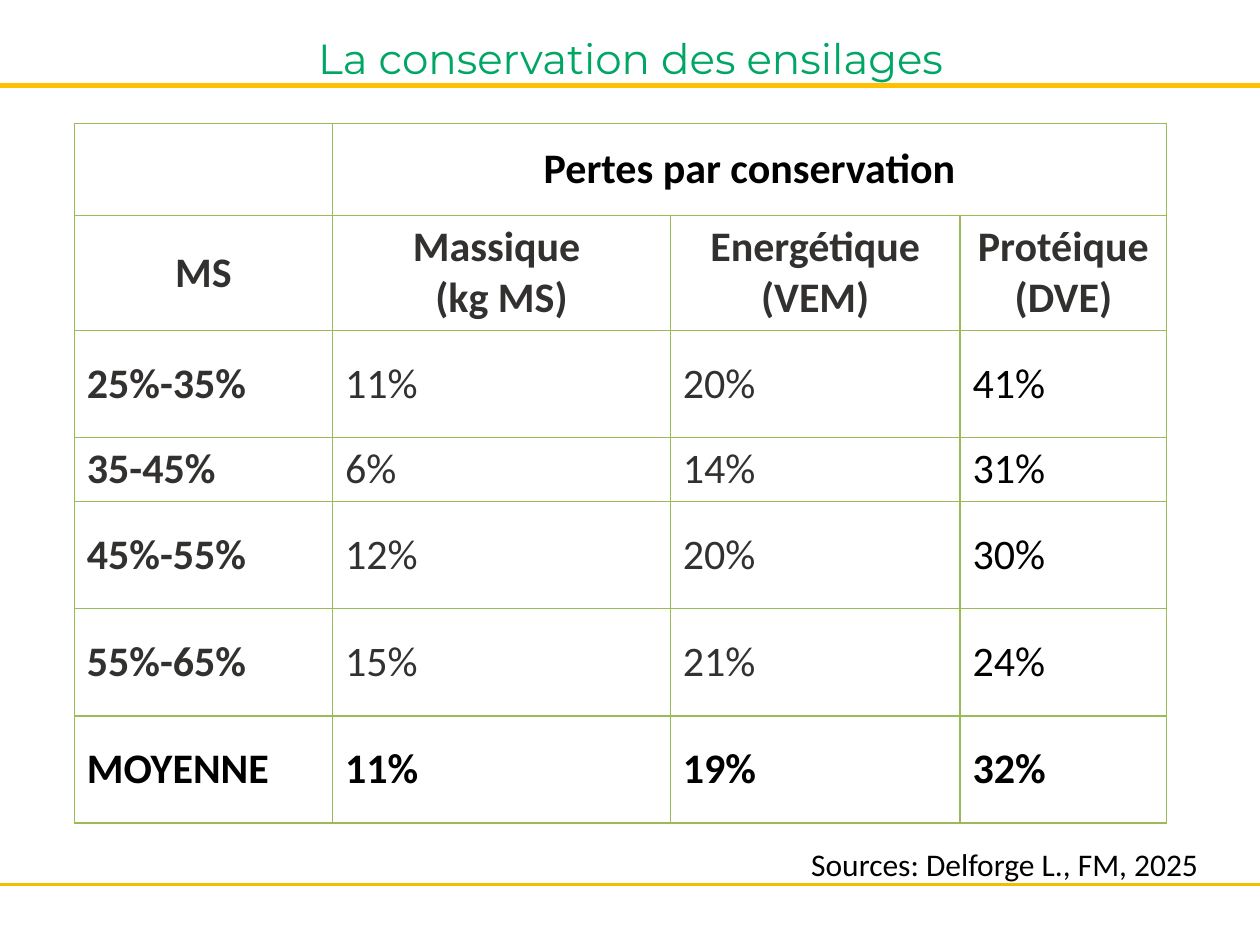
from lxml import etree
from pptx import Presentation
from pptx import util as u
from pptx.dml.color import RGBColor
from pptx.enum import shapes, text
from pptx.oxml.ns import qn

GREEN = RGBColor(0x00, 0xA6, 0x64)
GOLD = RGBColor(0xFF, 0xC0, 0x00)
DARK_GOLD = RGBColor(0xF2, 0xBE, 0x00)
BORDER = RGBColor(0x9B, 0xBB, 0x59)
CHARCOAL = RGBColor(0x32, 0x31, 0x30)
BLACK = RGBColor(0x00, 0x00, 0x00)

COLUMN_WIDTHS = [2.05, 2.68, 2.3, 1.64]
ROW_HEIGHTS = [0.73, 0.89, 0.85, 0.49, 0.85, 0.85, 0.85]
ROWS = [
    ["", "Pertes par conservation", "", ""],
    ["MS", "Massique \n(kg MS)", "Energétique (VEM)", "Protéique (DVE)"],
    ["25%-35%", "11%", "20%", "41%"],
    ["35-45%", "6%", "14%", "31%"],
    ["45%-55%", "12%", "20%", "30%"],
    ["55%-65%", "15%", "21%", "24%"],
    ["MOYENNE", "11%", "19%", "32%"],
]


def format_text(frame, color, alignment=text.PP_ALIGN.LEFT, **font_format):
    for paragraph in frame.paragraphs:
        paragraph.alignment = alignment
        paragraph.font.color.rgb = color
        for name, value in font_format.items():
            setattr(paragraph.font, name, value)


def add_rule(slide, top, color, width):
    line = slide.shapes.add_connector(
        shapes.MSO_CONNECTOR.STRAIGHT, 0, u.Inches(top), u.Inches(10), u.Inches(top))
    line.line.color.rgb = color
    line.line.width = u.Pt(width)
    etree.SubElement(line._element.spPr, qn("a:effectLst"))


def place_title(slide, left, top, width, height):
    title = slide.shapes.title
    title.left, title.top = u.Inches(left), u.Inches(top)
    title.width, title.height = u.Inches(width), u.Inches(height)
    frame = title.text_frame
    frame.text = "La conservation des ensilages"
    frame.vertical_anchor = text.MSO_ANCHOR.MIDDLE
    format_text(frame, GREEN, text.PP_ALIGN.CENTER, name="Montserrat", size=u.Pt(24))


def set_borders(cell):
    properties = cell._tc.get_or_add_tcPr()
    for side in ("a:lnL", "a:lnR", "a:lnT", "a:lnB"):
        line = etree.SubElement(properties, qn(side), w=str(u.Pt(1)))
        fill = etree.SubElement(line, qn("a:solidFill"))
        etree.SubElement(fill, qn("a:srgbClr"), val=str(BORDER))


def cell_style(row, column):
    """Return the colour, weight and alignment for a place in the table."""
    last_row = len(ROWS) - 1
    header = row < 2
    black = row in (0, last_row) or (not header and column == 3)
    bold = header or row == last_row or column == 0
    alignment = text.PP_ALIGN.CENTER if header else text.PP_ALIGN.LEFT
    return BLACK if black else CHARCOAL, bold, alignment


def add_loss_table(slide, left, top):
    table = slide.shapes.add_table(
        len(ROWS), len(COLUMN_WIDTHS), u.Inches(left), u.Inches(top),
        u.Inches(sum(COLUMN_WIDTHS)), u.Inches(sum(ROW_HEIGHTS))).table
    table.first_row = table.horz_banding = False
    for column, width in zip(table.columns, COLUMN_WIDTHS):
        column.width = u.Inches(width)
    for row, height in zip(table.rows, ROW_HEIGHTS):
        row.height = u.Inches(height)
    table.cell(0, 1).merge(table.cell(0, 3))

    for row, values in enumerate(ROWS):
        for column, value in enumerate(values):
            cell = table.cell(row, column)
            set_borders(cell)
            cell.fill.background()
            cell.vertical_anchor = text.MSO_ANCHOR.MIDDLE
            if value:
                cell.text = value
                color, bold, alignment = cell_style(row, column)
                format_text(cell.text_frame, color, alignment,
                            name="Calibri", size=u.Pt(24), bold=bold)


def add_source(slide, left, top, width, height):
    box = slide.shapes.add_textbox(*map(u.Inches, (left, top, width, height)))
    frame = box.text_frame
    frame.word_wrap = True
    frame.auto_size = text.MSO_AUTO_SIZE.SHAPE_TO_FIT_TEXT
    frame.text = "Sources: Delforge L., FM, 2025"
    format_text(frame, BLACK, name="Calibri", size=u.Pt(18))


def main():
    presentation = Presentation()
    presentation.slide_width = u.Inches(10)
    presentation.slide_height = u.Inches(7.5)
    slide = presentation.slides.add_slide(presentation.slide_layouts[5])

    # Rules above and below the content
    add_rule(slide, 0.68, GOLD, 3)
    add_rule(slide, 7.02, DARK_GOLD, 2)

    # Title, table and source
    place_title(slide, 0.28, 0.15, 9.45, 0.61)
    add_loss_table(slide, 0.59, 0.98)
    add_source(slide, 6.34, 6.66, 3.86, 0.4)

    presentation.save("out.pptx")


if __name__ == "__main__":
    main()
